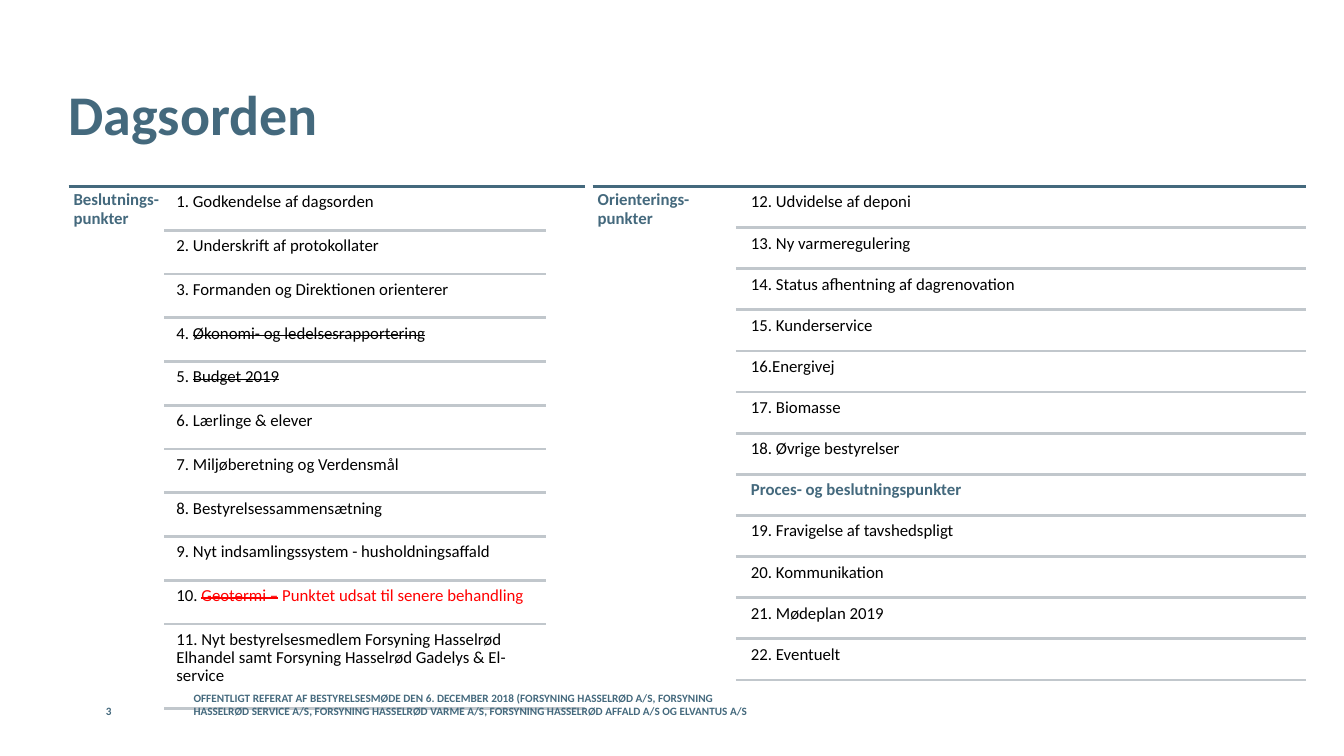
from dataclasses import dataclass, field

from lxml import etree
from pptx import Presentation
from pptx.dml.color import RGBColor
from pptx.enum.shapes import MSO_CONNECTOR
from pptx.enum.text import MSO_ANCHOR
from pptx.oxml.ns import qn
from pptx.util import Inches, Pt

STRAIGHT = MSO_CONNECTOR.STRAIGHT
TOP, MIDDLE, BOTTOM = MSO_ANCHOR.TOP, MSO_ANCHOR.MIDDLE, MSO_ANCHOR.BOTTOM

SLATE = RGBColor(0x44, 0x69, 0x7D)
GREY = RGBColor(0xC1, 0xC7, 0xCC)
BLACK = RGBColor(0x00, 0x00, 0x00)
RED = RGBColor(0xFF, 0x00, 0x00)

# The slide is a grid of square cells, ten to the inch.
CELL = Inches(0.1)
COLUMNS, ROWS = 133.33, 75
AGENDA_TOP = 18.5
TEXT_DROP = 0.2
ITEM_INSET = 0.5
FOOTER_TOP, FOOTER_HEIGHT = 69.3, 1.9
RULE_WIDTH = Pt(2)

HEADING = {"size": Pt(12), "bold": True}
ITEM = {"size": Pt(12)}
TITLE = {"size": Pt(40), "bold": True}
FOOTER = {"size": Pt(8), "bold": True}
AGENDA_PARAGRAPH = {"line_spacing": 0.9, "space_after": Pt(4)}


@dataclass(frozen=True)
class Span:
    text: str
    color: RGBColor = BLACK
    strike: bool = False
    bold: bool = False


@dataclass(frozen=True)
class Item:
    spans: list[Span]
    height: float
    rule_right: float


@dataclass(frozen=True)
class Area:
    left: float
    top: float
    width: float
    height: float


@dataclass(frozen=True)
class Label:
    """A text block outside the agenda."""
    text: str
    area: Area
    anchor: MSO_ANCHOR
    font: dict


@dataclass(frozen=True)
class Panel:
    heading: str
    left: float
    rule_left: float
    text_left: float
    text_right: float
    right: float
    items: list[Item] = field(default_factory=list)


def cells(count: float) -> int:
    return round(count * CELL)


def plain_items(texts: list[str], height: float, right: float) -> list[Item]:
    return [Item([Span(text)], height, right) for text in texts]


def add_text(shapes, area: Area, spans: list[Span], font_format: dict,
             anchor=TOP, inset: float = 0, paragraph_format: dict | None = None) -> None:
    box = shapes.add_textbox(*map(cells, (area.left, area.top, area.width, area.height)))
    frame = box.text_frame
    frame_format = {"word_wrap": True, "vertical_anchor": anchor}
    for side in ("left", "top", "right", "bottom"):
        frame_format[f"margin_{side}"] = cells(inset)
    for name, value in frame_format.items():
        setattr(frame, name, value)
    para = frame.paragraphs[0]
    for name, value in (paragraph_format or {}).items():
        setattr(para, name, value)
    for span in spans:
        run = para.add_run()
        run.text = span.text
        for name, value in {"name": "Calibri", "bold": span.bold, **font_format}.items():
            setattr(run.font, name, value)
        run.font.color.rgb = span.color
        if span.strike:
            run._r.get_or_add_rPr().set("strike", "sngStrike")


def add_rule(shapes, left: float, right: float, row: float, color: RGBColor) -> None:
    rule = shapes.add_connector(STRAIGHT, *map(cells, (left, row, right, row)))
    rule.line.color.rgb = color
    rule.line.width = RULE_WIDTH
    etree.SubElement(rule._element.spPr, qn("a:effectLst"))


def add_panel(page, panel: Panel) -> None:
    shapes = page.shapes.add_group_shape().shapes
    add_rule(shapes, panel.left, panel.right, AGENDA_TOP, SLATE)
    heading_area = Area(panel.left, AGENDA_TOP, panel.rule_left - panel.left,
                        sum(item.height for item in panel.items))
    add_text(shapes, heading_area, [Span(panel.heading, SLATE)], HEADING,
             inset=ITEM_INSET, paragraph_format=AGENDA_PARAGRAPH)
    row = AGENDA_TOP
    for item in panel.items:
        area = Area(panel.text_left, row + TEXT_DROP,
                    panel.text_right - panel.text_left, item.height - TEXT_DROP)
        add_text(shapes, area, item.spans, ITEM,
                 inset=ITEM_INSET, paragraph_format=AGENDA_PARAGRAPH)
        row += item.height
        add_rule(shapes, panel.rule_left, item.rule_right, row, GREY)


DECISION_ROW, DECISION_RIGHT = 4.34, 54.2
BRIEFING_ROW, BRIEFING_RIGHT = 4.08, 129.6

DECISIONS = Panel("Beslutnings-punkter", 6.8, 16.3, 17, DECISION_RIGHT, 58, [
    *plain_items([
        "1. Godkendelse af dagsorden",
        "2. Underskrift af protokollater",
        "3. Formanden og Direktionen orienterer",
    ], DECISION_ROW, DECISION_RIGHT),
    Item([Span("4. "), Span("Økonomi- og ledelsesrapportering", strike=True)],
         DECISION_ROW, DECISION_RIGHT),
    Item([Span("5. "), Span("Budget 2019", strike=True)], DECISION_ROW, DECISION_RIGHT),
    *plain_items([
        "6. Lærlinge & elever",
        "7. Miljøberetning og Verdensmål",
        "8. Bestyrelsessammensætning",
        "9. Nyt indsamlingssystem - husholdningsaffald",
    ], DECISION_ROW, DECISION_RIGHT),
    Item([Span("10. "), Span("Geotermi –", RED, strike=True),
          Span(" Punktet udsat til senere behandling", RED)], DECISION_ROW, DECISION_RIGHT),
    Item([Span("11. Nyt bestyrelsesmedlem Forsyning Hasselrød Elhandel samt "
               "Forsyning Hasselrød Gadelys & El-service")], 8.4, 58),
])

BRIEFINGS = Panel("Orienterings-punkter", 58.8, 73, 74, BRIEFING_RIGHT, BRIEFING_RIGHT, [
    *plain_items([
        "12. Udvidelse af deponi",
        "13. Ny varmeregulering",
        "14. Status afhentning af dagrenovation",
        "15. Kunderservice",
        "16.Energivej",
        "17. Biomasse",
        "18. Øvrige bestyrelser",
    ], BRIEFING_ROW, BRIEFING_RIGHT),
    Item([Span("Proces- og beslutningspunkter", SLATE, bold=True)],
         BRIEFING_ROW, BRIEFING_RIGHT),
    *plain_items([
        "19. Fravigelse af tavshedspligt",
        "20. Kommunikation",
        "21. Mødeplan 2019",
        "22. Eventuelt",
    ], BRIEFING_ROW, BRIEFING_RIGHT),
])

HEADLINE = Label("Dagsorden", Area(6.8, 4, 115, 14.5), MIDDLE, TITLE)
FOOTERS = [
    Label("OFFENTLIGT REFERAT AF BESTYRELSESMØDE DEN 6. DECEMBER 2018 "
          "(FORSYNING HASSELRØD A/S, FORSYNING HASSELRØD SERVICE A/S, "
          "FORSYNING HASSELRØD VARME A/S, FORSYNING HASSELRØD AFFALD A/S OG ELVANTUS A/S",
          Area(19.2, FOOTER_TOP, 56.7, FOOTER_HEIGHT), BOTTOM, FOOTER),
    Label("3", Area(10.5, FOOTER_TOP, 6.8, FOOTER_HEIGHT), BOTTOM, FOOTER),
]


def add_label(page, label: Label) -> None:
    add_text(page.shapes, label.area, [Span(label.text, SLATE)], label.font, label.anchor)


def main() -> None:
    deck = Presentation()
    deck.slide_width, deck.slide_height = cells(COLUMNS), cells(ROWS)
    page = deck.slides.add_slide(deck.slide_layouts[6])
    add_label(page, HEADLINE)
    for panel in (DECISIONS, BRIEFINGS):
        add_panel(page, panel)
    for footer in FOOTERS:
        add_label(page, footer)
    deck.save("out.pptx")


if __name__ == "__main__":
    main()
